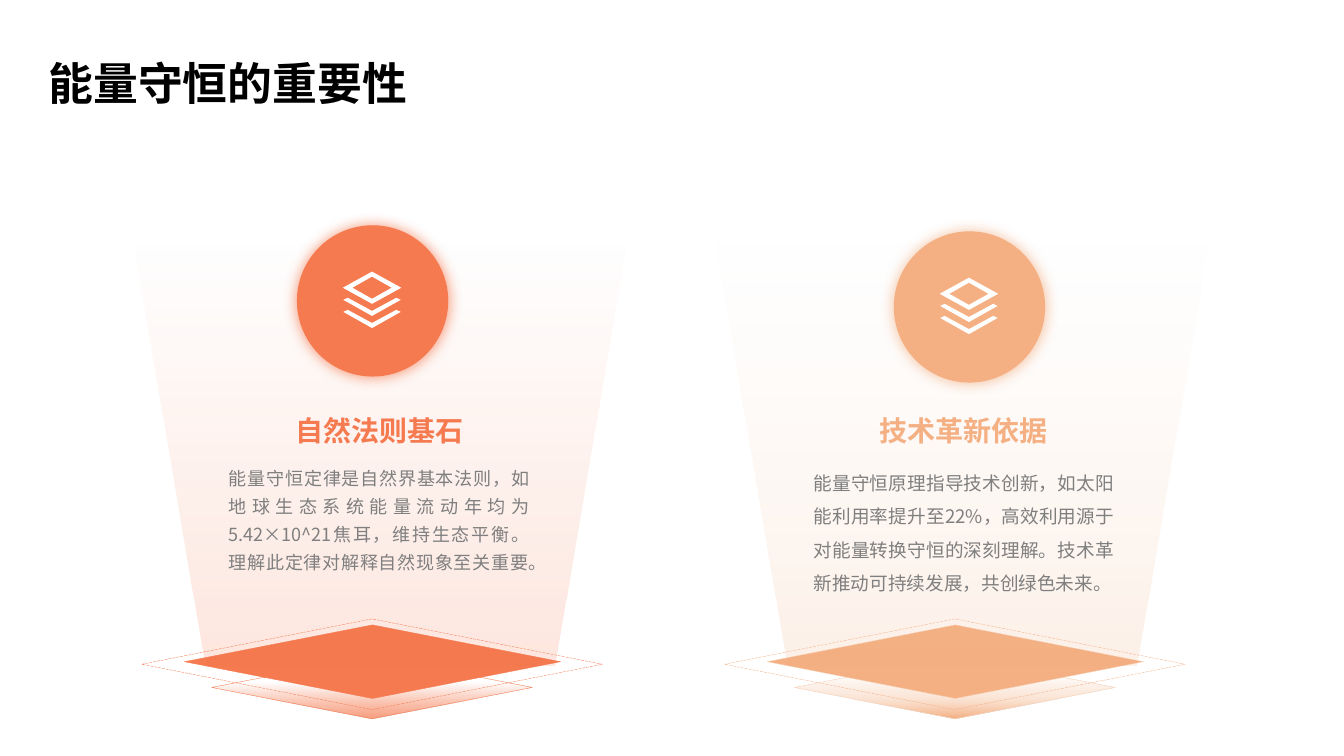
import pptx
import pptx.util
import pptx.oxml
import pptx.oxml.ns
import pptx.dml.color
import pptx.enum.dml
import pptx.enum.shapes
import pptx.enum.text

TITLE = "能量守恒的重要性"
COLUMNS = [
    dict(
        head="自然法则基石",
        body="能量守恒定律是自然界基本法则，如地球生态系统能量流动年均为5.42×10^21焦耳，维持生态平衡。理解此定律对解释自然现象至关重要。",
        left=130, disc=(165, 224), label=(48, 397), note=87,
        size=12.9, lead=1.3, tone="coral",
        glow=[(41, 0), (72, 42), (100, 74)],
    ),
    dict(
        head="技术革新依据",
        body="能量守恒原理指导技术创新，如太阳能利用率提升至22%，高效利用源于对能量转换守恒的深刻理解。技术革新推动可持续发展，共创绿色未来。",
        left=708, disc=(179, 230), label=(53, 390), note=89,
        size=13.3, lead=1.5, tone="sand",
        glow=[(27, 2), (68, 34), (100, 60)],
    ),
]
THEME = dict(
    font="Noto Sans CJK SC", ink="000000", gray="7F7F7F", white="FFFFFF",
    title=32, head=20,
    coral=dict(main="F57A50", soft="F57A50", deep="F57A50"),
    sand=dict(main="F4B083", soft="F8D0B5", deep="EC792D"),
)

COLS, ROWS = 1333, 750
CELL = pptx.util.Inches(0.01)
KIND = pptx.enum.shapes.MSO_SHAPE
ALIGN = pptx.enum.text.PP_ALIGN
ANCHOR = pptx.enum.text.MSO_ANCHOR


def rgb(code):
    return pptx.dml.color.RGBColor.from_string(code)


def span(cells):
    return round(cells * CELL)


def place(shape, left, top, width, height):
    shape.left, shape.top = span(left), span(top)
    shape.width, shape.height = span(width), span(height)


def node(code):
    return pptx.oxml.parse_xml(code.replace(">", f" {pptx.oxml.ns.nsdecls('a')}>", 1))


def tint(color, alpha):
    return f'<a:srgbClr val="{color}"><a:alpha val="{alpha * 1000}"/></a:srgbClr>'


def text(shape, words, size, color, bold=False, align=ALIGN.LEFT,
         anchor=ANCHOR.MIDDLE, lead=1.0, gap=0):
    frame = shape.text_frame
    frame.word_wrap = True
    frame.auto_size = pptx.enum.text.MSO_AUTO_SIZE.NONE
    frame.vertical_anchor = anchor
    para = frame.paragraphs[0]
    para.alignment, para.line_spacing = align, lead
    para.space_before = para.space_after = pptx.util.Pt(gap)
    props = para._p.get_or_add_pPr()
    props.set("marL", "0")
    props.set("indent", "0")
    props.append(node("<a:buNone></a:buNone>"))
    run = para.add_run()
    run.text = words
    font = run.font
    font.size, font.bold, font.name = pptx.util.Pt(size), bold, THEME["font"]
    font.color.rgb = rgb(color)
    face = node("<a:ea></a:ea>")
    face.set("typeface", THEME["font"])
    font._element.find(pptx.oxml.ns.qn("a:latin")).addnext(face)


def paint(shape, fill=None, line=None, width=0.25):
    shape.shadow.inherit = False
    if isinstance(fill, list):
        shape.fill.gradient()
        stops = "".join(f'<a:gs pos="{at * 1000}">{tint(color, alpha)}</a:gs>'
                        for at, color, alpha in fill)
        grad = node('<a:gradFill rotWithShape="1"><a:gsLst>' + stops +
                    '</a:gsLst><a:lin ang="5400000" scaled="0"/></a:gradFill>')
        old = shape._element.spPr.find(pptx.oxml.ns.qn("a:gradFill"))
        old.getparent().replace(old, grad)
    elif fill:
        shape.fill.solid()
        shape.fill.fore_color.rgb = rgb(fill)
    else:
        shape.fill.background()
    if line:
        shape.line.color.rgb = rgb(line)
        shape.line.width = pptx.util.Pt(width)
    else:
        shape.line.fill.background()


def draw(slide, kind, box, **look):
    shape = slide.shapes.add_shape(kind, 0, 0, 0, 0)
    place(shape, *box)
    paint(shape, **look)
    return shape


def rhombus(x, y, wide, high):
    return [(x, y - high), (x + wide, y), (x, y + high), (x - wide, y)]


def chevron(x, y):
    return [(x + 24, y), (x + 28.5, y + 2), (x, y + 18),
            (x - 28.5, y + 2), (x - 24, y), (x, y + 13)]


def icon(slide, x, top):
    mid = top + 16
    rings = [rhombus(x, mid, 29, 16), rhombus(x, mid, 19.5, 11),
             chevron(x, top + 26), chevron(x, top + 38)]
    rings = [[(span(a), span(b)) for a, b in ring] for ring in rings]
    pen = slide.shapes.build_freeform(*rings[0][0], scale=1.0)
    for ring in rings:
        pen.move_to(*ring[0])
        pen.add_line_segments(ring[1:], close=True)
    paint(pen.convert_to_shape(), fill=THEME["white"])


def column(slide, item, head, body):
    tone, left = THEME[item["tone"]], item["left"]
    main, soft, deep = tone["main"], tone["soft"], tone["deep"]
    glow = [(at, deep if at == 100 else main, alpha) for at, alpha in item["glow"]]
    draw(slide, KIND.DIAMOND, (left + 80, 651, 318, 62), fill=glow, line=soft)
    draw(slide, KIND.DIAMOND, (left + 53, 620, 373, 73), fill=main, line=soft)
    rim = draw(slide, KIND.DIAMOND, (left + 10.5, 614, 457, 90), line=main)
    rim.line.dash_style = pptx.enum.dml.MSO_LINE.LONG_DASH
    beam = draw(slide, KIND.TRAPEZOID, (left, 229, 493, 431),
                fill=[(0, main, 19), (100, soft, 0)])
    beam.rotation, beam.adjustments[0] = 180, 0.17

    inset, top = item["disc"]
    disc = draw(slide, KIND.OVAL, (left + inset, top, 149, 149),
                fill=main, line=main, width=0.75)
    halo = node('<a:outerShdw blurRad="127000" dist="0" dir="0" algn="ctr" '
                'rotWithShape="0">' + tint(main, 80) + '</a:outerShdw>')
    disc._element.spPr.find(pptx.oxml.ns.qn("a:effectLst")).append(halo)
    icon(slide, left + inset + 74, top + 45.5)

    inset, width = item["label"]
    place(head, left + inset, 402, width, 50)
    text(head, item["head"], THEME["head"], main, bold=True, align=ALIGN.CENTER)
    place(body, left + item["note"], 452, 318, 156)
    text(body, item["body"], item["size"], THEME["gray"], align=ALIGN.JUSTIFY,
         anchor=ANCHOR.TOP, lead=item["lead"], gap=3)
    for shape in (head, body):
        slide.shapes._spTree.append(shape._element)


def main():
    deck = pptx.Presentation()
    deck.slide_width, deck.slide_height = span(COLS), span(ROWS)
    slide = deck.slides.add_slide(deck.slide_layouts.get_by_name("Comparison"))
    title, *slots = list(slide.placeholders)
    place(title, 38, 37, 1257, 79)
    text(title, TITLE, THEME["title"], THEME["ink"], bold=True, lead=1.2)
    for item, head, body in zip(COLUMNS, slots[::2], slots[1::2]):
        column(slide, item, head, body)
    deck.save("out.pptx")


if __name__ == "__main__":
    main()
